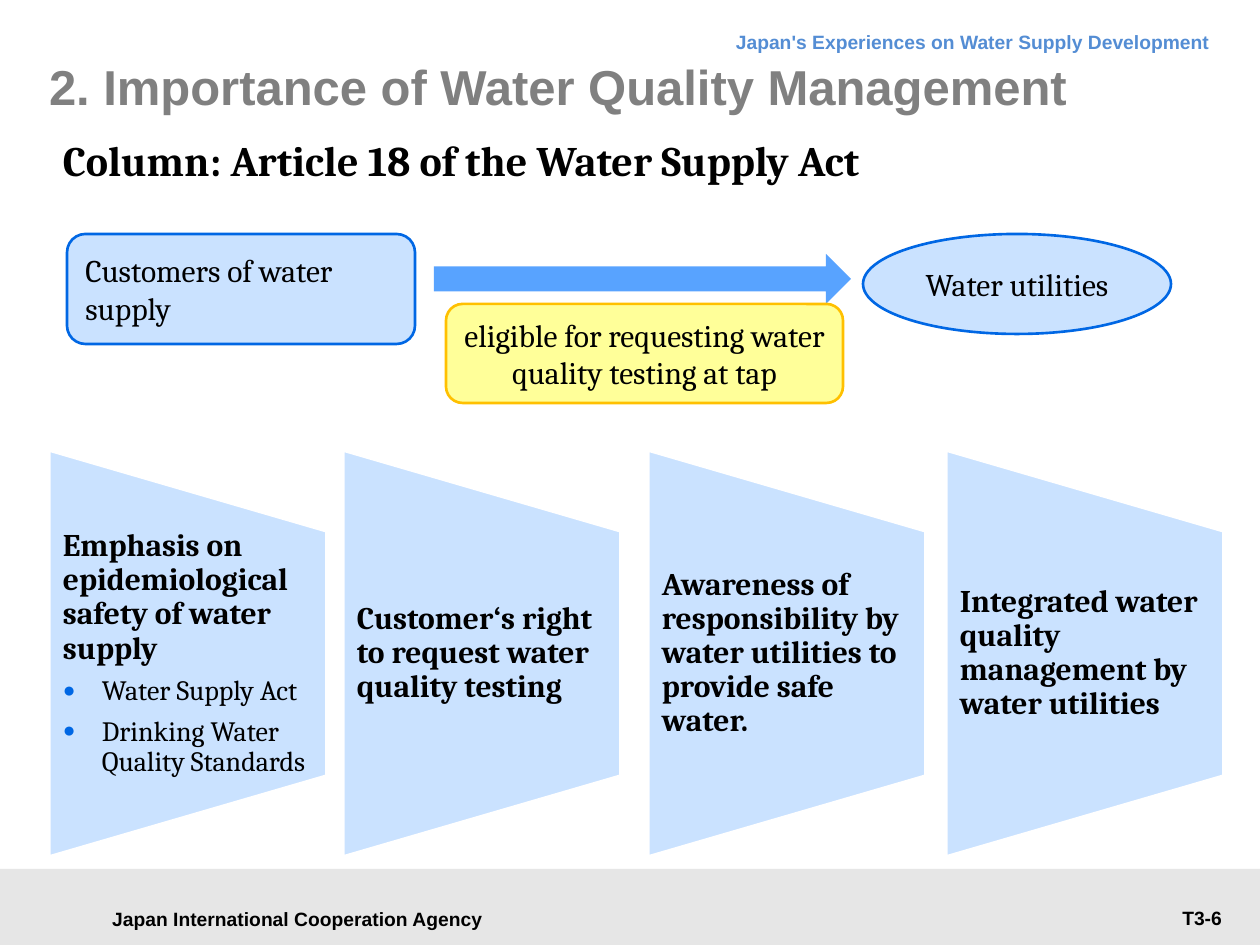
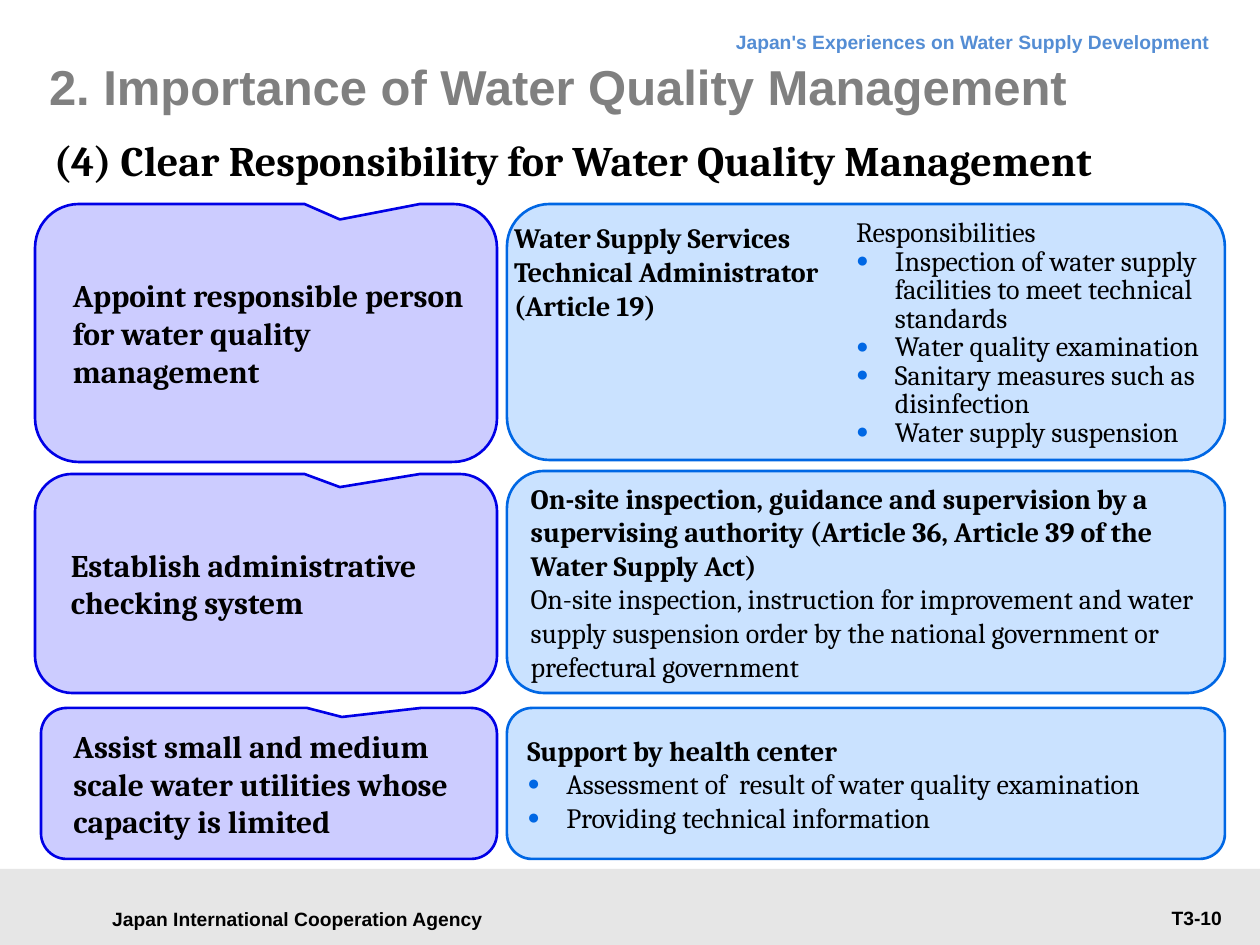
from dataclasses import dataclass

from lxml import etree
from pptx import Presentation
from pptx import util as u
from pptx.dml.color import RGBColor
from pptx.enum import shapes, text
from pptx.oxml.ns import qn

# ---- Content ----
TITLE = "2. Importance of Water Quality Management"
SERIES = "Japan's Experiences on Water Supply Development"
AGENCY = "Japan International Cooperation Agency"

# Paragraphs are (kind, text); kind is "lead", "plain" or "bullet".
REQUEST = {
    "number": "T3-6",
    "heading": "Column: Article 18 of the Water Supply Act",
    "customers": [("plain", "Customers of water supply")],
    "utilities": [("plain", "Water utilities")],
    "request": [("plain", "eligible for requesting water quality testing at tap")],
    "effects": [
        (49, [("lead", "Emphasis on epidemiological safety of water supply"),
              ("bullet", "Water Supply Act"),
              ("bullet", "Drinking Water Quality Standards")]),
        (343, [("lead", "Customer‘s right to request water quality testing")]),
        (648, [("lead", "Awareness of responsibility by water utilities "
                        "to provide safe water.")]),
        (946, [("lead", "Integrated water quality management by water utilities")]),
    ],
}

RESPONSIBILITY = {
    "number": "T3-10",
    "heading": "(4) Clear Responsibility for Water Quality Management",
    # (action, its box, details, their box)
    "rows": [
        ("Appoint responsible person for water quality\vmanagement",
         (35, 204, 462, 258), [], (507, 204, 718, 256)),
        ("Establish administrative checking system",
         (35, 474, 462, 219),
         [("lead", "On-site inspection, guidance and supervision by a supervising "
                   "authority (Article 36, Article 39 of the Water Supply Act)"),
          ("plain", "On-site inspection, instruction for improvement and water supply "
                    "suspension order by the national government or "
                    "prefectural government")],
         (507, 471, 718, 222)),
        ("Assist small and medium scale water utilities whose capacity is limited",
         (41, 708, 456, 151),
         [("lead", "Support by health center"),
          ("bullet", "Assessment of  result of water quality examination"),
          ("bullet", "Providing technical information")],
         (507, 708, 718, 151)),
    ],
    "administrator": [("lead", "Water Supply Services Technical Administrator (Article 19)")],
    "duties": [
        ("plain", "Responsibilities"),
        ("bullet", "Inspection of water supply facilities to meet technical standards"),
        ("bullet", "Water quality examination"),
        ("bullet", "Sanitary measures such as disinfection"),
        ("bullet", "Water supply suspension"),
    ],
}


# ---- Theme and scale ----
@dataclass(frozen=True)
class Theme:
    sans: str = "Arial"
    serif: str = "Cambria"
    ink: str = "000000"
    title_grey: str = "808080"
    series_blue: str = "548DD4"
    band: str = "E6E6E6"
    white: str = "FFFFFF"
    pale_blue: str = "CAE2FF"
    blue: str = "0067E4"
    arrow: str = "58A3FF"
    yellow: str = "FFFF99"
    gold: str = "FFC000"
    lilac: str = "CCCCFF"
    indigo: str = "0000E6"
    title_size: int = 28
    heading_size: int = 24
    label_size: int = 18
    body_size: int = 16
    small_size: int = 11
    outline: float = 1.5


THEME = Theme()
EMU_PER_PX = 914400 / 126
WIDTH, HEIGHT = 1260, 945
INSETS = (13, 6, 13, 6)
BULLET_INDENT = 39
SHAPE = shapes.MSO_SHAPE
ALIGN = text.PP_ALIGN
ANCHOR = text.MSO_ANCHOR


def px(length):
    return u.Emu(round(length * EMU_PER_PX))


def place(shape, box):
    shape.left, shape.top, shape.width, shape.height = map(px, box)


# ---- Text ----
def set_bullet(paragraph, shown):
    properties = paragraph._p.get_or_add_pPr()
    indent = px(BULLET_INDENT) if shown else 0
    properties.set("marL", str(indent))
    properties.set("indent", str(-indent))
    if not shown:
        etree.SubElement(properties, qn("a:buNone"))
        return
    colour = etree.SubElement(properties, qn("a:buClr"))
    etree.SubElement(colour, qn("a:srgbClr"), val=THEME.blue)
    etree.SubElement(properties, qn("a:buSzPct"), val="75000")
    etree.SubElement(properties, qn("a:buFont"), typeface=THEME.sans)
    etree.SubElement(properties, qn("a:buChar"), char="●")


def write(shape, paragraphs, size, font=THEME.serif, colour=THEME.ink, align=ALIGN.LEFT,
          anchor=ANCHOR.MIDDLE, insets=INSETS, spacing=None, after=0):
    """Fill a shape; after is the gap below a paragraph as a share of its type size."""
    frame = shape.text_frame
    frame.word_wrap = True
    frame.auto_size = text.MSO_AUTO_SIZE.NONE
    frame.vertical_anchor = anchor
    (frame.margin_left, frame.margin_top,
     frame.margin_right, frame.margin_bottom) = map(px, insets)
    for index, (kind, words) in enumerate(paragraphs):
        paragraph = frame.add_paragraph() if index else frame.paragraphs[0]
        paragraph.text = words
        set_bullet(paragraph, kind == "bullet")
        type_size = THEME.body_size if kind == "bullet" else size
        paragraph.alignment = align
        paragraph.line_spacing = spacing
        paragraph.space_before = u.Pt(0)
        paragraph.space_after = u.Pt(type_size * after)
        for run in paragraph.runs:
            run.font.name = font
            run.font.size = u.Pt(type_size)
            run.font.bold = kind == "lead"
            run.font.color.rgb = RGBColor.from_string(colour)


def add_label(slide, box, paragraphs, size, **style):
    label = slide.shapes.add_textbox(*map(px, box))
    write(label, paragraphs, size, **style)


# ---- Shapes ----
def paint(shape, fill, line=None, line_width=THEME.outline):
    shape.shadow.inherit = False
    shape.fill.solid()
    shape.fill.fore_color.rgb = RGBColor.from_string(fill)
    if line:
        shape.line.color.rgb = RGBColor.from_string(line)
        shape.line.width = u.Pt(line_width)
    else:
        shape.line.fill.background()


def add_box(slide, kind, box, fill, line=None, paragraphs=(), size=THEME.label_size, **style):
    shape = slide.shapes.add_shape(kind, *map(px, box))
    paint(shape, fill, line)
    if paragraphs:
        write(shape, paragraphs, size, **style)
    return shape


def add_effect(slide, left, paragraphs):
    """A trapezoid that narrows to the right."""
    top, bottom, width, slope = 450, 857, 278, 81
    right = left + width
    builder = slide.shapes.build_freeform(left, bottom, scale=EMU_PER_PX)
    builder.add_line_segments([(left, top), (right, top + slope), (right, bottom - slope)])
    shape = builder.convert_to_shape()
    paint(shape, THEME.pale_blue, THEME.white, 2)
    write(shape, paragraphs, THEME.label_size, insets=(14, slope, 14, slope),
          spacing=0.9, after=0.35)


# ---- Frame shared by the slides ----
def start_slide(presentation, layout_index, content, heading_left):
    slide = presentation.slides.add_slide(presentation.slide_layouts[layout_index])
    add_box(slide, SHAPE.RECTANGLE, (0, 869, WIDTH, 76), THEME.band)
    small = dict(size=THEME.small_size, font=THEME.sans)
    add_label(slide, (89, 897, 417, 43), [("lead", AGENCY)], align=ALIGN.CENTER, **small)
    add_label(slide, (343, 16, 880, 48), [("lead", SERIES)], align=ALIGN.RIGHT,
              anchor=ANCHOR.TOP, colour=THEME.series_blue, spacing=u.Pt(18), **small)
    add_label(slide, (1037, 900, 198, 36), [("lead", content["number"])],
              align=ALIGN.RIGHT, anchor=ANCHOR.TOP, **small)
    title = slide.shapes.title
    place(title, (49, 35, 1131, 101))
    write(title, [("lead", TITLE)], THEME.title_size, font=THEME.sans,
          colour=THEME.title_grey, insets=(0, 0, 0, 0))
    add_label(slide, (heading_left, 134, 1182, 55), [("lead", content["heading"])],
              THEME.heading_size, anchor=ANCHOR.TOP, insets=(5, 0, 0, 0))
    return slide


# ---- Slides ----
def build_request(presentation):
    slide = start_slide(presentation, 5, REQUEST, 58)
    blue = (THEME.pale_blue, THEME.blue)
    add_box(slide, SHAPE.ROUNDED_RECTANGLE, (67, 234, 348, 110), *blue, REQUEST["customers"])
    add_box(slide, SHAPE.OVAL, (863, 234, 308, 100), *blue, REQUEST["utilities"],
            align=ALIGN.CENTER)
    add_box(slide, SHAPE.RIGHT_ARROW, (434, 254, 417, 50), THEME.arrow)
    add_box(slide, SHAPE.ROUNDED_RECTANGLE, (446, 304, 397, 99), THEME.yellow, THEME.gold,
            REQUEST["request"], align=ALIGN.CENTER)
    for left, paragraphs in REQUEST["effects"]:
        add_effect(slide, left, paragraphs)


def build_responsibility(presentation):
    slide = start_slide(presentation, 1, RESPONSIBILITY, 49)
    for action, action_box, details, details_box in RESPONSIBILITY["rows"]:
        callout = add_box(slide, SHAPE.ROUNDED_RECTANGULAR_CALLOUT, action_box, THEME.lilac,
                          THEME.indigo, [("lead", action)], insets=(25, 5, 15, 5))
        for index, value in enumerate((0.16, -0.44, 0.17)):
            callout.adjustments[index] = value
        add_box(slide, SHAPE.ROUNDED_RECTANGLE, details_box, THEME.pale_blue, THEME.blue,
                details, THEME.body_size)
    add_label(slide, (501, 215, 356, 198), RESPONSIBILITY["administrator"],
              THEME.body_size, anchor=ANCHOR.TOP)

    # The duties list lies on top of the first details box
    duties = slide.placeholders[1]
    place(duties, (843, 214, 417, 243))
    write(duties, RESPONSIBILITY["duties"], THEME.body_size, anchor=ANCHOR.TOP, spacing=0.85)
    slide.shapes._spTree.append(duties._element)


def main():
    presentation = Presentation()
    presentation.slide_width, presentation.slide_height = px(WIDTH), px(HEIGHT)
    build_request(presentation)
    build_responsibility(presentation)
    presentation.save("out.pptx")


if __name__ == "__main__":
    main()
